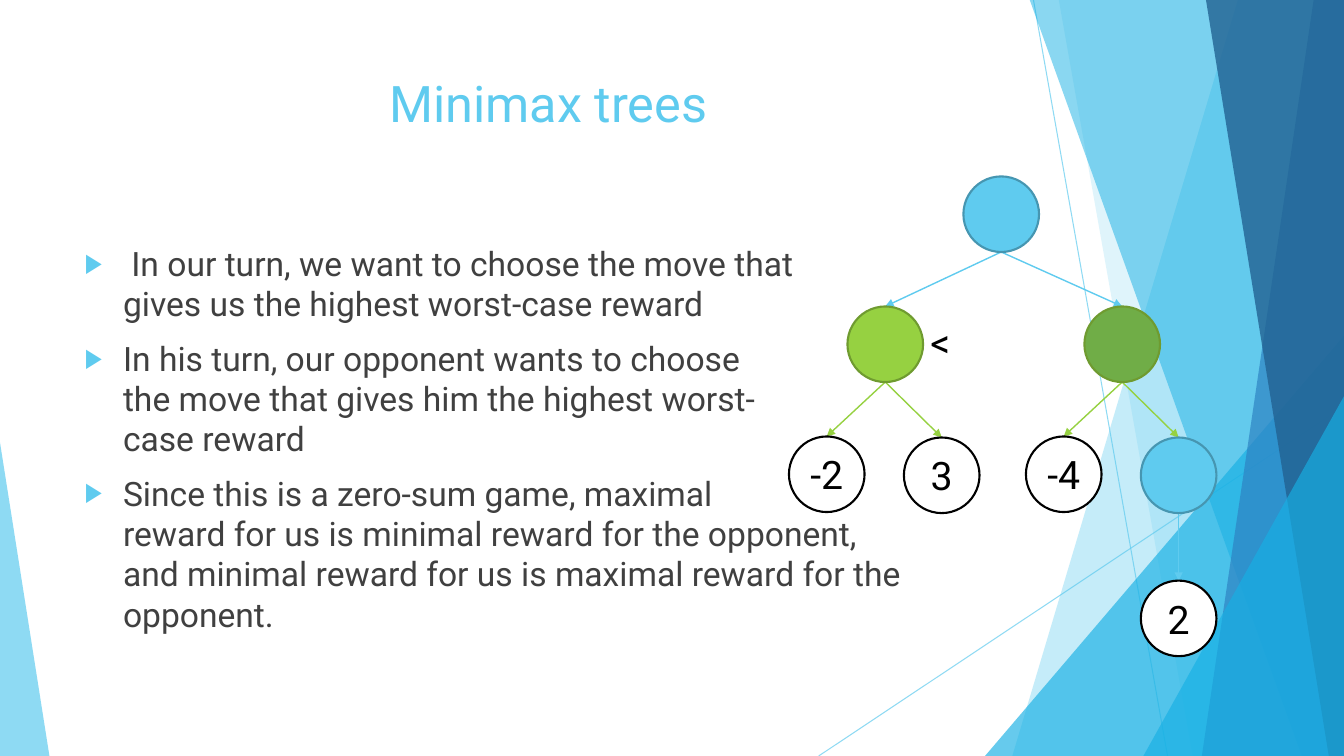
from lxml import etree
from pptx import Presentation
from pptx.dml.color import RGBColor
from pptx.enum.shapes import MSO_CONNECTOR as Connector, MSO_SHAPE as Shape
from pptx.enum.text import MSO_ANCHOR as Anchor, MSO_AUTO_SIZE as AutoSize, PP_ALIGN as Align
from pptx.oxml.ns import qn
from pptx.util import Inches, Pt

BLUE, GREEN, DARK_GREEN = "5FCBEF", "96D141", "70AD47"
BLUE_EDGE, GREEN_EDGE = "4696B1", "6F9B30"
BRIGHT_BLUE, WHITE, BLACK, GREY = "17B0E4", "FFFFFF", "000000", "404040"
DIAMETER = 0.75


def color(hex_string):
    return RGBColor.from_string(hex_string)


def add_xml(parent, tag, **attributes):
    return etree.SubElement(parent, qn(tag), attributes)


class SlideBuilder:
    font = "Roboto"

    def __init__(self, slide):
        self.slide = slide
        self.shapes = slide.shapes

    def set_alpha(self, shape, percent):
        for solid in shape._element.spPr.iter(qn("a:solidFill")):
            add_xml(solid[0], "a:alpha", val=str(percent * 1000))

    def paint(self, shape, fill, edge=None, alpha=None):
        shape.shadow.inherit = False
        shape.fill.solid()
        shape.fill.fore_color.rgb = color(fill)
        if edge:
            shape.line.color.rgb = color(edge)
            shape.line.width = Pt(1.5)
        else:
            shape.line.fill.background()
        if alpha:
            self.set_alpha(shape, alpha)

    def format_text(self, paragraph, size, text_color, align=Align.LEFT):
        paragraph.alignment = align
        for run in paragraph.runs:
            run.font.name = self.font
            run.font.size = Pt(size)
            run.font.color.rgb = color(text_color)

    def polygon(self, points, fill, alpha):
        corners = [(Inches(x), Inches(y)) for x, y in points]
        builder = self.shapes.build_freeform(*corners[0], scale=1.0)
        builder.add_line_segments(corners[1:], close=True)
        self.paint(builder.convert_to_shape(), fill, alpha=alpha)

    def triangle(self, left, top, width, apex, fill, alpha):
        shape = self.shapes.add_shape(Shape.ISOSCELES_TRIANGLE, Inches(left), Inches(top),
                                      Inches(width), Inches(7.5 - top))
        shape.adjustments[0] = apex
        self.paint(shape, fill, alpha=alpha)

    def line(self, start, end, line_color, width, alpha=None, arrow=False):
        connector = self.shapes.add_connector(
            Connector.STRAIGHT, *(Inches(value) for value in (*start, *end)))
        connector.line.color.rgb = color(line_color)
        connector.line.width = Pt(width)
        if alpha:
            self.set_alpha(connector, alpha)
        if arrow:
            add_xml(connector.line._get_or_add_ln(), "a:tailEnd", type="triangle")
        add_xml(connector._element.spPr, "a:effectLst")

    def node(self, center_x, top, fill, edge, label):
        shape = self.shapes.add_shape(Shape.OVAL, Inches(center_x - DIAMETER / 2), Inches(top),
                                      Inches(DIAMETER), Inches(DIAMETER))
        self.paint(shape, fill, edge)
        if label:
            frame = shape.text_frame
            frame.margin_left = frame.margin_right = frame.margin_top = frame.margin_bottom = 0
            frame.vertical_anchor = Anchor.MIDDLE
            frame.text = label
            self.format_text(frame.paragraphs[0], 28, BLACK, Align.CENTER)

    def label(self, left, top, width, height, text):
        box = self.shapes.add_textbox(Inches(left), Inches(top), Inches(width), Inches(height))
        box.text_frame.word_wrap = True
        box.text_frame.text = text
        self.format_text(box.text_frame.paragraphs[0], 28, BLACK)

    def placeholder(self, index, top, height, text):
        shape = self.slide.placeholders[index]
        shape.left, shape.top = Inches(0.74), Inches(top)
        shape.width, shape.height = Inches(9.4), Inches(height)
        frame = shape.text_frame
        frame.text = text
        frame.word_wrap = True
        frame.auto_size = AutoSize.NONE
        frame.vertical_anchor = Anchor.TOP
        self.shapes._spTree.append(shape._element)  # in front of the backdrop
        return frame

    def title(self, text):
        frame = self.placeholder(0, 0.67, 1.44, text)
        self.format_text(frame.paragraphs[0], 36, BLUE, Align.CENTER)

    def bullets(self, items):
        for paragraph in self.placeholder(1, 2.36, 4.24, "\n".join(items)).paragraphs:
            self.format_text(paragraph, 24, GREY)
            paragraph.space_before = Pt(10)
            properties = paragraph._p.get_or_add_pPr()
            properties.set("marL", str(Inches(0.38)))
            properties.set("indent", str(-Inches(0.38)))
            add_xml(add_xml(properties, "a:buClr"), "a:srgbClr", val=BLUE)
            add_xml(properties, "a:buSzPct", val="80000")
            add_xml(properties, "a:buChar", char="▶")


def draw_backdrop(builder):
    def band(top_left, bottom_left, fill, alpha):
        builder.polygon([(top_left, -0.01), (13.33, -0.01), (13.33, 7.5), (bottom_left, 7.5)],
                        fill, alpha)

    builder.line((10.25, 0), (11.58, 7.5), BLUE, 0.75, alpha=70)
    builder.line((13.33, 4.03), (8.12, 7.5), BLUE, 0.75, alpha=70)
    band(12.28, 10.04, BLUE, 36)
    band(10.5, 11.83, BLUE, 20)
    builder.triangle(9.77, 3.33, 3.56, 1, BRIGHT_BLUE, 66)
    band(10.21, 12.91, BRIGHT_BLUE, 50)
    band(13.03, 11.92, "2E83C3", 70)
    band(11.96, 13.18, "226292", 80)
    builder.triangle(11.34, 3.93, 1.99, 1, BRIGHT_BLUE, 66)
    builder.triangle(0, 4.39, 0.49, 0, BLUE, 70)


def draw_tree(builder):
    # Name: centre x, top, fill, edge, label
    nodes = {
        "root": (9.93, 1.75, BLUE, BLUE_EDGE, ""),
        "left": (8.78, 3.04, GREEN, GREEN_EDGE, ""),
        "right": (11.13, 3.04, DARK_GREEN, GREEN_EDGE, ""),
        "minus two": (8.2, 4.33, WHITE, BLACK, "-2"),
        "three": (9.34, 4.34, WHITE, BLACK, "3"),
        "minus four": (10.55, 4.33, WHITE, BLACK, "-4"),
        "our turn": (11.69, 4.34, BLUE, BLUE_EDGE, ""),
        "two": (11.69, 5.76, WHITE, BLACK, "2"),
    }
    children = {
        "root": ("left", "right"),
        "left": ("minus two", "three"),
        "right": ("minus four", "our turn"),
        "our turn": ("two",),
    }
    for parent, names in children.items():
        x, top = nodes[parent][:2]
        edge_color = GREEN if parent in ("left", "right") else BLUE
        for name in names:
            builder.line((x, top + DIAMETER), nodes[name][:2], edge_color, 1, arrow=True)
    for node in nodes.values():
        builder.node(*node)
    builder.label(9.13, 3.11, 0.52, 0.57, "<")


def main():
    presentation = Presentation()
    presentation.slide_width, presentation.slide_height = Inches(13.33), Inches(7.5)
    builder = SlideBuilder(presentation.slides.add_slide(presentation.slide_layouts[1]))

    # Backdrop
    draw_backdrop(builder)

    # Title and list
    builder.title("Minimax trees")
    builder.bullets([
        " In our turn, we want to choose the move that\vgives us the highest worst-case reward",
        "In his turn, our opponent wants to choose\vthe move that gives him the highest worst-\v"
        "case reward",
        "Since this is a zero-sum game, maximal\vreward for us is minimal reward for the opponent,\v"
        "and minimal reward for us is maximal reward for the opponent.",
    ])

    # Game tree
    draw_tree(builder)

    presentation.save("out.pptx")


if __name__ == "__main__":
    main()
